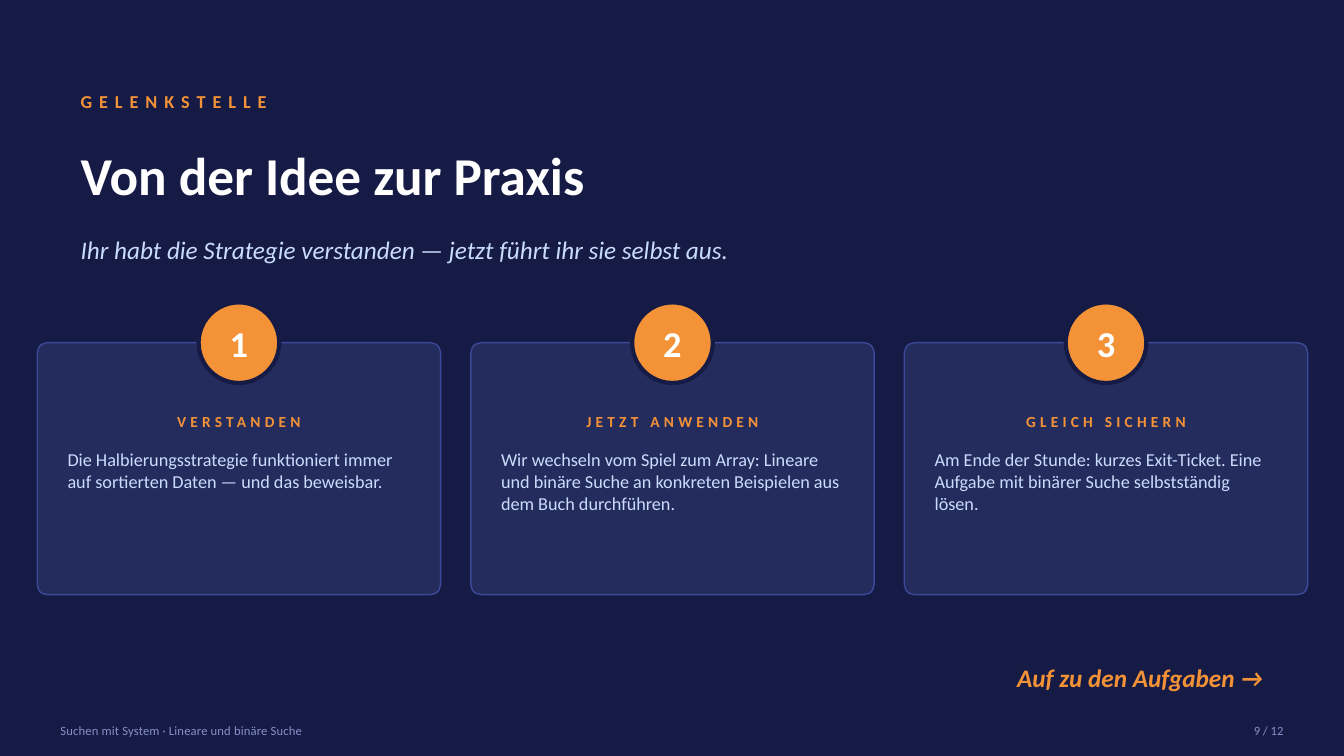
from pptx import Presentation
from pptx.dml.color import RGBColor
from pptx.enum.shapes import MSO_SHAPE as Shape
from pptx.enum.text import MSO_ANCHOR as Anchor, PP_ALIGN as Align
from pptx.util import Pt

EMU_PER_PX = 9144
FONT = "Calibri"
COLORS = {
    "background": "151B45",
    "card": "242C5E",
    "border": "3B4998",
    "accent": "F39237",
    "title": "FFFFFF",
    "body": "CADCFC",
    "footer": "8590C5",
}
STEPS = [
    ("VERSTANDEN",
     "Die Halbierungsstrategie funktioniert immer auf sortierten Daten — und das beweisbar."),
    ("JETZT ANWENDEN",
     "Wir wechseln vom Spiel zum Array: Lineare und binäre Suche an konkreten Beispielen "
     "aus dem Buch durchführen."),
    ("GLEICH SICHERN",
     "Am Ende der Stunde: kurzes Exit-Ticket. Eine Aufgabe mit binärer Suche "
     "selbstständig lösen."),
]
CARD_LEFT, CARD_TOP, CARD_WIDTH, CARD_HEIGHT, CARD_GAP = 37, 340, 400, 250, 30
BADGE_SIZE = 80


def color(name):
    """Return the named colour as an RGBColor."""
    return RGBColor.from_string(COLORS[name])


def emu(*lengths):
    """Convert px lengths to EMU."""
    return [length * EMU_PER_PX for length in lengths]


def write(shape, text, size, color_name, bold=False, italic=False,
          align=Align.LEFT, anchor=Anchor.MIDDLE, spacing=0):
    """Fill a shape with one formatted paragraph and no insets."""
    frame = shape.text_frame
    frame.text = text
    frame.word_wrap = True
    frame.vertical_anchor = anchor
    frame.margin_left = frame.margin_top = frame.margin_right = frame.margin_bottom = 0
    paragraph = frame.paragraphs[0]
    paragraph.alignment = align
    run = paragraph.runs[0]
    run.font.name = FONT
    run.font.size = Pt(size)
    run.font.bold = bold
    run.font.italic = italic
    run.font.color.rgb = color(color_name)
    if spacing:
        run.font._element.set("spc", str(round(spacing * 100)))


def add_text(slide, box, text, size, color_name, **style):
    """Add a text box at a px box."""
    write(slide.shapes.add_textbox(*emu(*box)), text, size, color_name, **style)


def add_panel(slide, kind, box, fill, line, line_width):
    """Add a filled and outlined shape without shadow."""
    shape = slide.shapes.add_shape(kind, *emu(*box))
    shape.shadow.inherit = False
    shape.fill.solid()
    shape.fill.fore_color.rgb = color(fill)
    shape.line.color.rgb = color(line)
    shape.line.width = Pt(line_width)
    return shape


def add_step(slide, number, heading, body):
    """Add a card with its numbered badge, heading and body text."""
    left = CARD_LEFT + (number - 1) * (CARD_WIDTH + CARD_GAP)
    card = add_panel(slide, Shape.ROUNDED_RECTANGLE,
                     (left, CARD_TOP, CARD_WIDTH, CARD_HEIGHT), "card", "border", 1)
    card.adjustments[0] = 0.04
    badge_box = (left + (CARD_WIDTH - BADGE_SIZE) // 2, CARD_TOP - BADGE_SIZE // 2,
                 BADGE_SIZE, BADGE_SIZE)
    badge = add_panel(slide, Shape.OVAL, badge_box, "accent", "background", 3)
    write(badge, str(number), 26, "title", bold=True, align=Align.CENTER)
    add_text(slide, (left + 20, CARD_TOP + 60, CARD_WIDTH - 40, 35), heading, 11, "accent",
             bold=True, align=Align.CENTER, spacing=3)
    add_text(slide, (left + 30, CARD_TOP + 105, CARD_WIDTH - 60, 135), body, 13, "body",
             anchor=Anchor.TOP)


def main():
    """Build the slide and save it."""
    presentation = Presentation()
    presentation.slide_width, presentation.slide_height = emu(1333, 750)
    slide = presentation.slides.add_slide(presentation.slide_layouts[6])
    slide.background.fill.solid()
    slide.background.fill.fore_color.rgb = color("background")

    add_text(slide, (80, 80, 1200, 40), "GELENKSTELLE", 13, "accent", bold=True, spacing=5)
    add_text(slide, (80, 130, 1200, 85), "Von der Idee zur Praxis", 38, "title", bold=True)
    add_text(slide, (80, 225, 1200, 45),
             "Ihr habt die Strategie verstanden — jetzt führt ihr sie selbst aus.",
             18, "body", italic=True)

    for number, (heading, body) in enumerate(STEPS, start=1):
        add_step(slide, number, heading, body)

    add_text(slide, (80, 650, 1173, 45), "Auf zu den Aufgaben →", 18, "accent",
             bold=True, italic=True, align=Align.RIGHT)
    add_text(slide, (60, 710, 800, 30), "Suchen mit System · Lineare und binäre Suche",
             9, "footer", spacing=0.1)
    add_text(slide, (1193, 710, 80, 30), "9 / 12", 9, "footer", align=Align.RIGHT)
    presentation.save("out.pptx")


if __name__ == "__main__":
    main()
